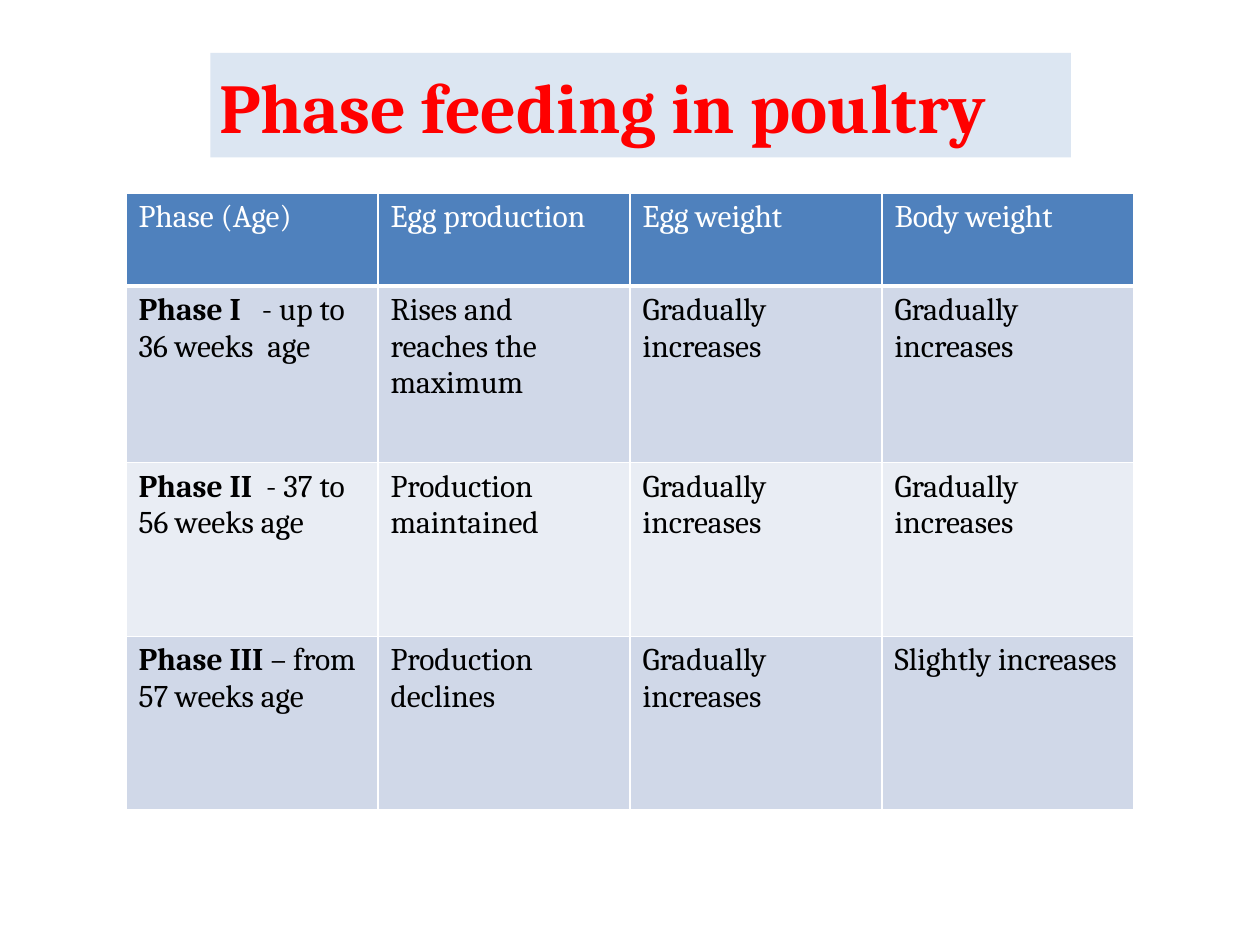
from dataclasses import dataclass

from lxml import etree
from pptx import Presentation
from pptx.dml.color import RGBColor
from pptx.enum.shapes import MSO_SHAPE
from pptx.enum.text import MSO_ANCHOR, PP_ALIGN
from pptx.oxml.ns import qn
from pptx.util import Inches, Pt

RECTANGLE = MSO_SHAPE.RECTANGLE
MIDDLE = MSO_ANCHOR.MIDDLE
LEFT = PP_ALIGN.LEFT


@dataclass(frozen=True)
class Theme:
    font: str = "Cambria"
    title_size: int = 40
    table_size: int = 18
    title_text: str = "FF0000"
    title_fill: str = "DCE6F2"
    header_text: str = "FFFFFF"
    header_fill: str = "4F81BD"
    body_text: str = "000000"
    body_fills: tuple = ("D0D8E8", "E9EDF4")
    border: str = "FFFFFF"


@dataclass(frozen=True)
class Phase:
    name: str
    age: str
    egg_production: str
    egg_weight: str
    body_weight: str


THEME = Theme()
HEADINGS = ("Phase (Age)", "Egg production", "Egg weight", "Body weight")
PHASES = (
    Phase("Phase I   ", "- up to 36 weeks  age", "Rises and reaches the maximum",
          "Gradually increases", "Gradually increases"),
    Phase("Phase II  ", "- 37 to 56 weeks age", "Production maintained",
          "Gradually increases", "Gradually increases"),
    Phase("Phase III ", "– from 57 weeks age", "Production declines",
          "Gradually increases", "Slightly increases"),
)
COLUMN_WIDTH = 2
ROW_HEIGHTS = (0.74, 1.4, 1.38, 1.38)


def style_run(run, size: int, color: str, bold: bool = False) -> None:
    run.font.name = THEME.font
    run.font.size = Pt(size)
    run.font.bold = bold
    run.font.color.rgb = RGBColor.from_string(color)


def add_title(slide, text: str) -> None:
    box = slide.shapes.add_shape(
        RECTANGLE, Inches(1.67), Inches(0.42), Inches(6.83), Inches(0.83))
    box.shadow.inherit = False
    box.fill.solid()
    box.fill.fore_color.rgb = RGBColor.from_string(THEME.title_fill)
    box.line.fill.background()
    frame = box.text_frame
    frame.margin_left = Inches(0.07)
    frame.margin_top = frame.margin_right = frame.margin_bottom = 0
    frame.vertical_anchor = MIDDLE
    frame.text = text
    para = frame.paragraphs[0]
    para.alignment = LEFT
    style_run(para.runs[0], THEME.title_size, THEME.title_text, bold=True)


def set_borders(cell, bottom_width: int) -> None:
    """Draw 1 pt borders, with a separate width for the bottom edge."""
    properties = cell._tc.get_or_add_tcPr()
    widths = {"a:lnL": 1, "a:lnR": 1, "a:lnT": 1, "a:lnB": bottom_width}
    for position, (tag, width) in enumerate(widths.items()):
        line = etree.Element(qn(tag), w=str(Pt(width)))
        fill = etree.SubElement(line, qn("a:solidFill"))
        etree.SubElement(fill, qn("a:srgbClr"), val=THEME.border)
        properties.insert(position, line)


def fill_cell(cell, parts: tuple[tuple[str, bool], ...], color: str,
              fill: str, bottom_width: int = 1) -> None:
    """Write (text, bold) parts into a cell and style it."""
    para = cell.text_frame.paragraphs[0]
    for text, bold in parts:
        run = para.add_run()
        run.text = text
        style_run(run, THEME.table_size, color, bold)
    cell.fill.solid()
    cell.fill.fore_color.rgb = RGBColor.from_string(fill)
    set_borders(cell, bottom_width)


def add_phase_table(slide) -> None:
    table = slide.shapes.add_table(
        len(PHASES) + 1, len(HEADINGS), Inches(1), Inches(1.53),
        Inches(COLUMN_WIDTH * len(HEADINGS)), Inches(sum(ROW_HEIGHTS))).table
    for row, height in zip(table.rows, ROW_HEIGHTS):
        row.height = Inches(height)
    for column, heading in enumerate(HEADINGS):
        fill_cell(table.cell(0, column), ((heading, False),),
                  THEME.header_text, THEME.header_fill, bottom_width=3)
    for index, phase in enumerate(PHASES):
        fill = THEME.body_fills[index % len(THEME.body_fills)]
        contents = (
            ((phase.name, True), (phase.age, False)),
            ((phase.egg_production, False),),
            ((phase.egg_weight, False),),
            ((phase.body_weight, False),),
        )
        for column, parts in enumerate(contents):
            fill_cell(table.cell(index + 1, column), parts, THEME.body_text, fill)


def main() -> None:
    deck = Presentation()
    deck.slide_width, deck.slide_height = Inches(10), Inches(7.5)
    slide = deck.slides.add_slide(deck.slide_layouts[6])
    add_title(slide, "Phase feeding in poultry")
    add_phase_table(slide)
    deck.save("out.pptx")


if __name__ == "__main__":
    main()
